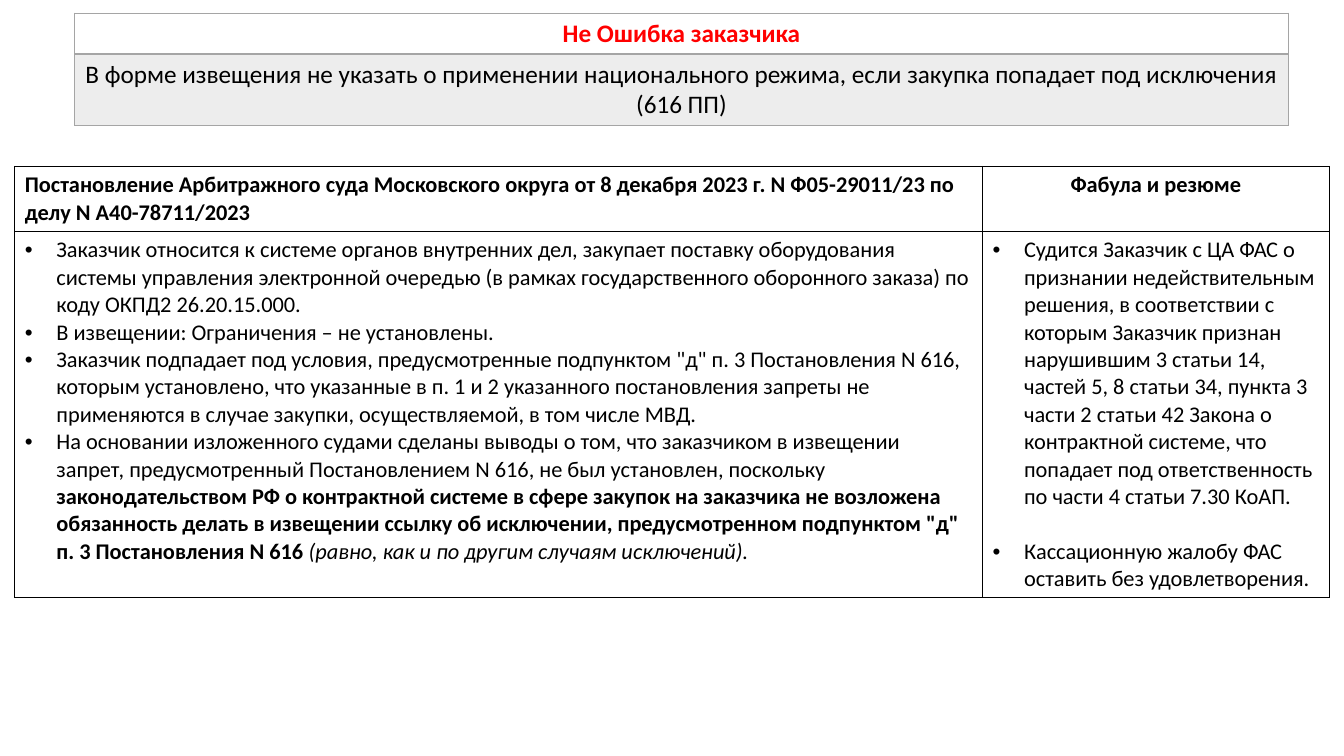
from pptx import Presentation
from pptx.dml.color import RGBColor
from pptx.enum.text import PP_ALIGN
from pptx.oxml.ns import qn
from pptx.util import Pt
from lxml import etree

LEFT, CENTER = PP_ALIGN.LEFT, PP_ALIGN.CENTER
BLACK = RGBColor(0x00, 0x00, 0x00)
RED = RGBColor(0xFF, 0x00, 0x00)
GRAY = RGBColor(0xA5, 0xA5, 0xA5)


def add_grid(slide, left, top, cols, rows, color):
    shape = slide.shapes.add_table(len(rows), len(cols), Pt(left), Pt(top),
                                   Pt(sum(cols)), Pt(sum(rows)))
    grid = shape.table
    grid.first_row = grid.horz_banding = False
    for col, width in zip(grid.columns, cols):
        col.width = Pt(width)
    for row, height in zip(grid.rows, rows):
        row.height = Pt(height)
    for cell in grid.iter_cells():
        cell.fill.background()
        props = cell._tc.get_or_add_tcPr()
        for place, side in enumerate(("lnL", "lnR", "lnT", "lnB")):
            line = etree.Element(qn("a:" + side), w=str(Pt(1)))
            fill = etree.SubElement(line, qn("a:solidFill"))
            etree.SubElement(fill, qn("a:srgbClr"), val=str(color))
            props.insert(place, line)
    return grid


def add_text(para, runs, size, color=BLACK, bold=False, align=LEFT,
             bullet=False, gap=0):
    para.alignment = align
    if gap:
        para.space_before = Pt(gap)
    if bullet:
        props = para._p.get_or_add_pPr()
        props.set("marL", str(Pt(22.5)))
        props.set("indent", str(-Pt(22.5)))
        etree.SubElement(props, qn("a:buFont"), typeface="Arial")
        etree.SubElement(props, qn("a:buChar"), char="•")
    font = para.font
    font.name, font.size, font.bold = "Calibri", Pt(size), bold
    font.color.rgb = color
    for text, style in runs:
        run = para.add_run()
        run.text = text
        if style == "bold":
            run.font.bold = True
        elif style == "italic":
            run.font.italic = True


deck = Presentation()
deck.slide_width, deck.slide_height = Pt(960), Pt(540)
slide = deck.slides.add_slide(deck.slide_layouts[6])

title = add_grid(slide, 53.3, 9.5, [867], [29.2, 50.8], GRAY)
head, topic = title.cell(0, 0), title.cell(1, 0)
add_text(head.text_frame.paragraphs[0], [("Не Ошибка заказчика", "")],
         18, RED, True, CENTER)
add_text(topic.text_frame.paragraphs[0], [(
    "В форме извещения не указать о применении национального режима, "
    "если закупка попадает под исключения (616 ПП)", "")], 18, align=CENTER)
head._tc.tcPr.find(qn("a:lnB")).set("w", str(Pt(2)))
topic.fill.solid()
topic.fill.fore_color.rgb = GRAY
tint = topic._tc.tcPr.find(qn("a:solidFill")).find(qn("a:srgbClr"))
etree.SubElement(tint, qn("a:alpha"), val="20000")

case = add_grid(slide, 10.6, 118.9, [691.2, 247.7], [46.5, 261], BLACK)
heads = [
    ("Постановление Арбитражного суда Московского округа от 8 декабря 2023 г. "
     "N Ф05-29011/23 по делу N А40-78711/2023", LEFT),
    ("Фабула и резюме", CENTER),
]
for col, (text, align) in enumerate(heads):
    add_text(case.cell(0, col).text_frame.paragraphs[0], [(text, "")],
             16, bold=True, align=align)

facts = [
    [("Заказчик относится к системе органов внутренних дел, закупает поставку "
      "оборудования системы управления электронной очередью (в рамках "
      "государственного оборонного заказа) по коду ОКПД2 26.20.15.000.", "")],
    [("В извещении: Ограничения – не установлены.", "")],
    [("Заказчик подпадает под условия, предусмотренные подпунктом \"д\" п. 3 "
      "Постановления N 616, которым установлено, что указанные в п. 1 и 2 "
      "указанного постановления запреты не применяются в случае закупки, "
      "осуществляемой, в том числе МВД.", "")],
    [("На основании изложенного судами сделаны выводы о том, что заказчиком в "
      "извещении запрет, предусмотренный Постановлением N 616, не был "
      "установлен, поскольку ", ""),
     ("законодательством РФ о контрактной системе в сфере закупок на заказчика "
      "не возложена обязанность делать в извещении ссылку об исключении, "
      "предусмотренном подпунктом \"д\" п. 3 Постановления N 616 ", "bold"),
     ("(равно, как и по другим случаям исключений).", "italic")],
]
result = [
    [("Судится Заказчик с ЦА ФАС о признании недействительным решения, в "
      "соответствии с которым Заказчик признан нарушившим 3 статьи 14, частей "
      "5, 8 статьи 34, пункта 3 части 2 статьи 42 Закона о контрактной "
      "системе, что попадает под ответственность по части 4 статьи 7.30 "
      "КоАП.", "")],
    [("Кассационную жалобу ФАС оставить без удовлетворения.", "")],
]
for col, (items, gap) in enumerate([(facts, 0), (result, 19.5)]):
    frame = case.cell(1, col).text_frame
    for place, runs in enumerate(items):
        para = frame.add_paragraph() if place else frame.paragraphs[0]
        add_text(para, runs, 16, bullet=True, gap=gap if place else 0)

deck.save("out.pptx")
